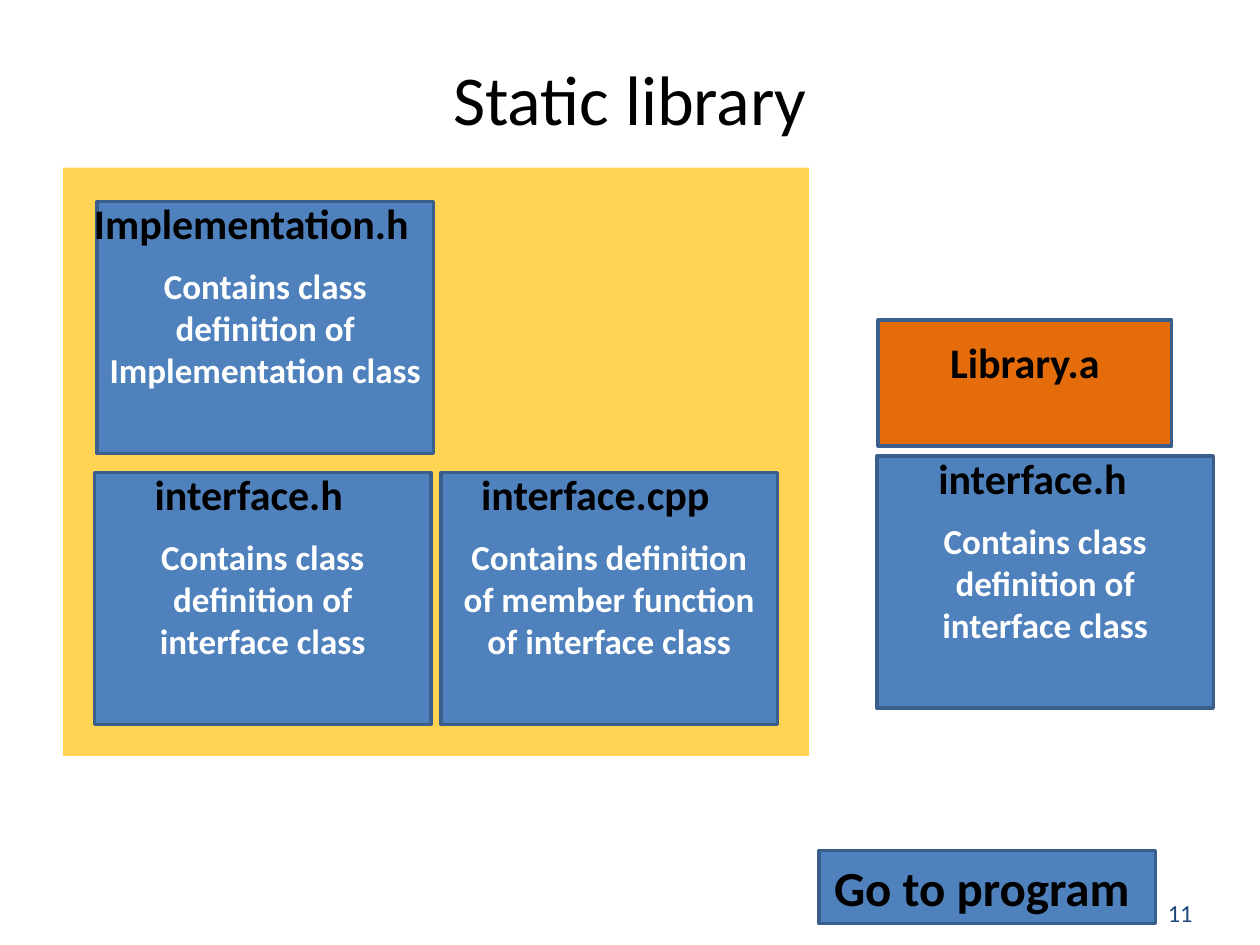
from lxml.etree import SubElement
from pptx import Presentation
from pptx.dml.color import RGBColor
from pptx.enum.shapes import MSO_SHAPE
from pptx.enum.text import MSO_ANCHOR, PP_ALIGN
from pptx.oxml.ns import qn
from pptx.util import Inches, Pt

COLORS = {
    "text": "000000",
    "white": "FFFFFF",
    "number": "1F497D",
    "panel": "FFC000",
    "file": "4F81BD",
    "archive": "E46C0A",
    "border": "3A5F8C",
}


def write(shape, text, size, color="text", bold=True, align=PP_ALIGN.CENTER):
    frame = shape.text_frame
    frame.word_wrap = True
    frame.vertical_anchor = MSO_ANCHOR.MIDDLE
    paragraph = frame.paragraphs[0]
    paragraph.alignment = align
    run = paragraph.add_run()
    run.text = text
    run.font.name = "Calibri"
    run.font.size = Pt(size)
    run.font.bold = bold
    run.font.color.rgb = RGBColor.from_string(COLORS[color])


def add_box(shapes, left, top, width, height, fill, border=True):
    box = shapes.add_shape(MSO_SHAPE.RECTANGLE, Inches(left), Inches(top), Inches(width), Inches(height))
    box.shadow.inherit = False
    box.fill.solid()
    box.fill.fore_color.rgb = RGBColor.from_string(COLORS[fill])
    if border:
        box.line.color.rgb = RGBColor.from_string(COLORS["border"])
        box.line.width = Pt(2)
    else:
        box.line.fill.background()
    return box


prs = Presentation()
prs.slide_width = Inches(10)
prs.slide_height = Inches(7.5)
slide = prs.slides.add_slide(prs.slide_layouts[6])

page_number = slide.shapes.add_textbox(Inches(9.17), Inches(7.08), Inches(0.67), Inches(0.33))
write(page_number, "11", 14, "number", bold=False, align=PP_ALIGN.LEFT)

title = slide.shapes.add_textbox(Inches(0.5), Inches(0.38), Inches(9), Inches(0.78))
write(title, "Static library", 40, bold=False)

sources_panel = add_box(slide.shapes, 0.5, 1.33, 5.92, 4.67, "panel", border=False)
panel_color = sources_panel.fill._xPr.find(qn("a:solidFill"))[0]
SubElement(panel_color, qn("a:alpha"), val="68000")

interface_note = "Contains class definition of interface class"
files = [
    (0.77, 1.6, 2.67, 2, "file", "Implementation.h", "Contains class definition of Implementation class", -0.21, -0.08, 2.87),
    (0.75, 3.75, 2.67, 2, "file", "interface.h", interface_note, -0.21, -0.08, 2.87),
    (3.5, 3.75, 2.67, 2, "file", "interface.cpp", "Contains definition of member function of interface class", -0.21, -0.08, 2.87),
    (6.97, 2.54, 2.33, 1, "archive", "Library.a", "", -0.17, 0.08, 2.67),
    (6.96, 3.62, 2.67, 2, "file", "interface.h", interface_note, -0.2, -0.08, 2.87),
]
for left, top, width, height, fill, name, note, name_dx, name_dy, name_width in files:
    group = slide.shapes.add_group_shape()
    file_box = add_box(group.shapes, left, top, width, height, fill)
    if note:
        write(file_box, note, 20, "white")
    file_name = group.shapes.add_textbox(
        Inches(left + name_dx), Inches(top + name_dy), Inches(name_width), Inches(0.5))
    write(file_name, name, 24)

program_button = add_box(slide.shapes, 6.5, 6.75, 2.67, 0.58, "file")
write(program_button, "Go to program ", 28)

prs.save("out.pptx")
